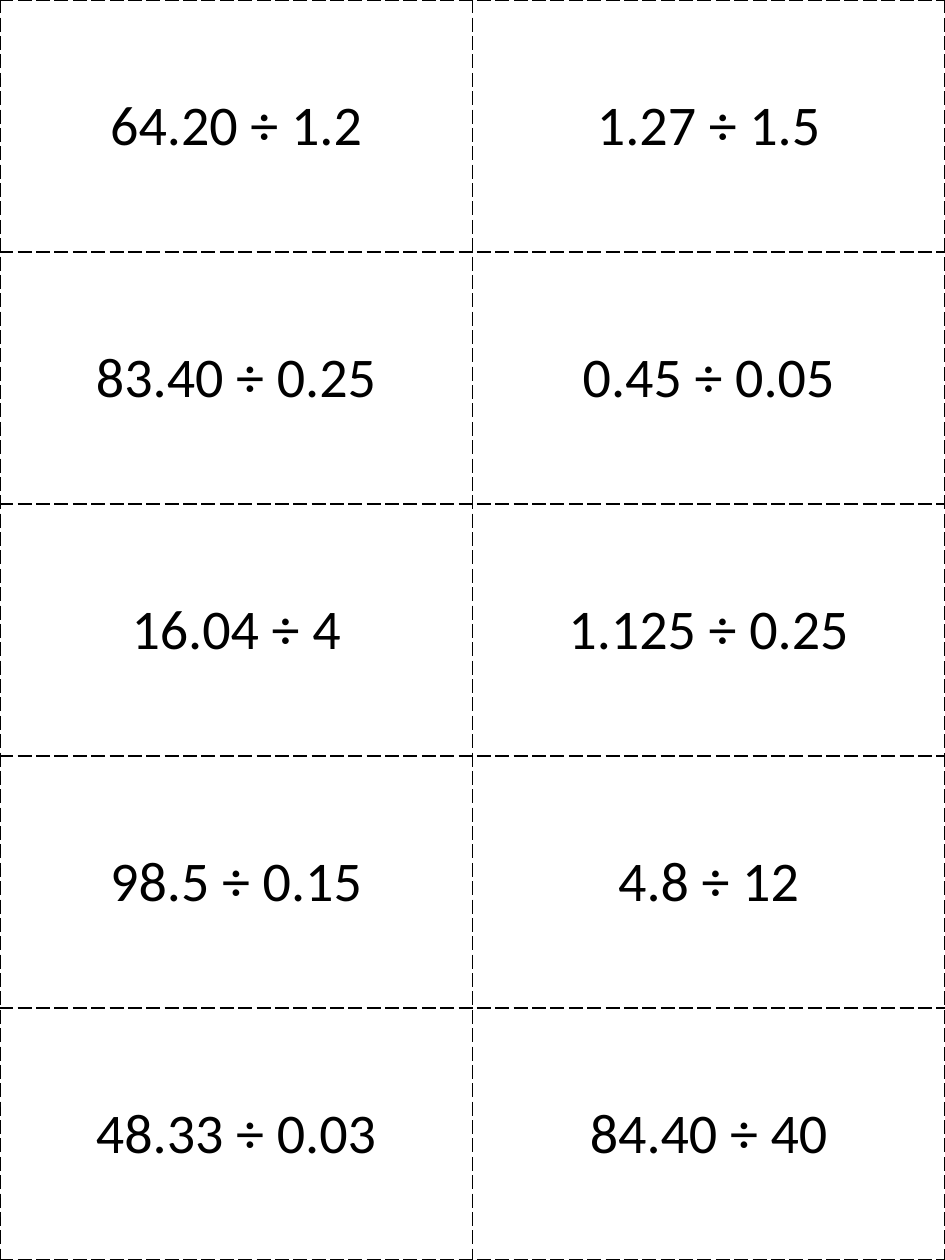
"""Build a sheet of decimal division cards."""
import pptx
import pptx.dml.color
import pptx.enum.text
import pptx.oxml.ns
import pptx.util
from lxml import etree

Inches = pptx.util.Inches
COLORS = {"ink": "000000", "paper": "FFFFFF"}
PROBLEMS = [
    ("64.20 ÷ 1.2", "1.27 ÷ 1.5"),
    ("83.40 ÷ 0.25", "0.45 ÷ 0.05"),
    ("16.04 ÷ 4", "1.125 ÷ 0.25"),
    ("98.5 ÷ 0.15", "4.8 ÷ 12"),
    ("48.33 ÷ 0.03", "84.40 ÷ 40"),
]


def rgb(name):
    """Return the named colour."""
    return pptx.dml.color.RGBColor.from_string(COLORS[name])


def set_borders(cell):
    """Draw dashed cutting lines on all four sides of a cell."""
    qn = pptx.oxml.ns.qn
    tcPr = cell._tc.get_or_add_tcPr()
    for side in ("lnL", "lnR", "lnT", "lnB"):
        ln = etree.SubElement(tcPr, qn(f"a:{side}"), w=str(pptx.util.Pt(1)))
        fill = etree.SubElement(ln, qn("a:solidFill"))
        etree.SubElement(fill, qn("a:srgbClr"), val=COLORS["ink"])
        etree.SubElement(ln, qn("a:prstDash"), val="lgDash")


def fill_card(cell, problem):
    """Write one centred problem in a bordered cell."""
    set_borders(cell)
    cell.fill.solid()
    cell.fill.fore_color.rgb = rgb("paper")
    cell.vertical_anchor = pptx.enum.text.MSO_ANCHOR.MIDDLE
    cell.text_frame.text = problem
    p = cell.text_frame.paragraphs[0]
    p.alignment = pptx.enum.text.PP_ALIGN.CENTER
    font = p.runs[0].font
    font.name = "Calibri"
    font.size = pptx.util.Pt(32)
    font.bold = False
    font.color.rgb = rgb("ink")


def add_cards(s, left, top, width, height):
    """Place the grid of problem cards in the given box."""
    rows, cols = len(PROBLEMS), len(PROBLEMS[0])
    table = s.shapes.add_table(rows, cols, left, top, width, height).table
    table.first_row = False
    table.horz_banding = False
    for row, problems in zip(table.rows, PROBLEMS):
        for cell, problem in zip(row.cells, problems):
            fill_card(cell, problem)


def main():
    """Build and save the sheet."""
    prs = pptx.Presentation()
    prs.slide_width, prs.slide_height = Inches(7.5), Inches(10)
    s = prs.slides.add_slide(prs.slide_layouts[6])
    add_cards(s, Inches(0), Inches(0), prs.slide_width, prs.slide_height)
    prs.save("out.pptx")


if __name__ == "__main__":
    main()
